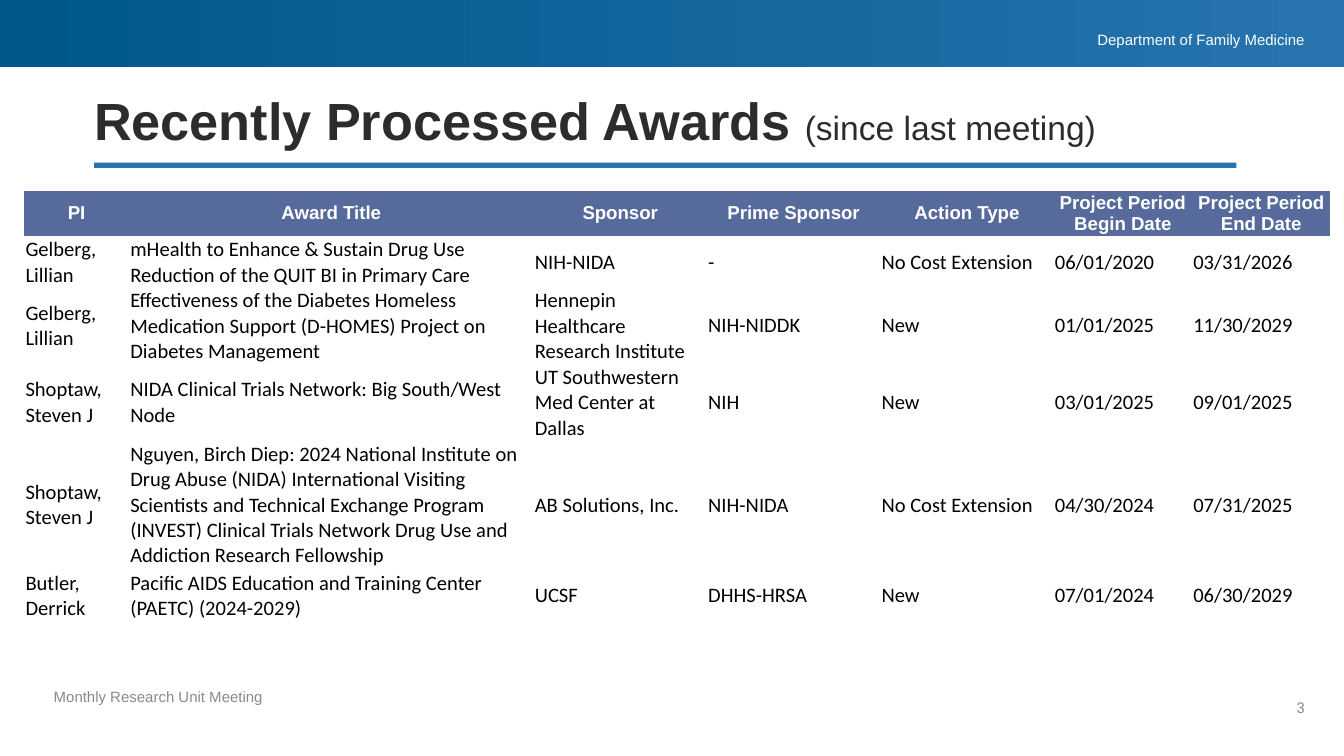
from dataclasses import dataclass

from pptx import Presentation
from pptx.dml.color import RGBColor as Rgb
from pptx.enum.shapes import MSO_SHAPE as Preset
from pptx.enum.text import MSO_ANCHOR as Anchor, MSO_AUTO_SIZE as AutoSize, PP_ALIGN as Align
from pptx.util import Inches, Pt


@dataclass(frozen=True)
class Theme:
    deep_blue: Rgb = Rgb.from_string("00578B")
    blue: Rgb = Rgb.from_string("2774AE")
    header: Rgb = Rgb.from_string("566B9C")
    ink: Rgb = Rgb.from_string("2B2C2E")
    gray: Rgb = Rgb.from_string("898989")
    black: Rgb = Rgb.from_string("000000")
    white: Rgb = Rgb.from_string("FFFFFF")
    title_size: Pt = Pt(28)
    subtitle_size: Pt = Pt(18)
    header_size: Pt = Pt(10)
    body_size: Pt = Pt(11)
    small_size: Pt = Pt(8)


THEME = Theme()
NO_STYLE_NO_GRID = "{2D5ABB26-0587-4C30-8999-92F81FD0307C}"

COLUMNS = [
    ("PI", 0.78), ("Award Title", 3.01), ("Sponsor", 1.29),
    ("Prime Sponsor", 1.29), ("Action Type", 1.29),
    ("Project Period Begin Date", 1.03), ("Project Period End Date", 1.03),
]
ROW_HEIGHTS = [0.31, 0.38, 0.57, 0.57, 0.96, 0.39]
AWARDS = [
    ("Gelberg, Lillian",
     "mHealth to Enhance & Sustain Drug Use Reduction of the QUIT BI in Primary Care",
     "NIH-NIDA", "-", "No Cost Extension", "06/01/2020", "03/31/2026"),
    ("Gelberg, Lillian",
     "Effectiveness of the Diabetes Homeless Medication Support (D-HOMES) Project on "
     "Diabetes Management",
     "Hennepin Healthcare Research Institute", "NIH-NIDDK", "New", "01/01/2025", "11/30/2029"),
    ("Shoptaw, Steven J",
     "NIDA Clinical Trials Network: Big South/West Node",
     "UT Southwestern Med Center at Dallas", "NIH", "New", "03/01/2025", "09/01/2025"),
    ("Shoptaw, Steven J",
     "Nguyen, Birch Diep: 2024 National Institute on Drug Abuse (NIDA) International "
     "Visiting Scientists and Technical Exchange Program (INVEST) Clinical Trials Network "
     "Drug Use and Addiction Research Fellowship",
     "AB Solutions, Inc.", "NIH-NIDA", "No Cost Extension", "04/30/2024", "07/31/2025"),
    ("Butler, Derrick",
     "Pacific AIDS Education and Training Center (PAETC) (2024-2029)",
     "UCSF", "DHHS-HRSA", "New", "07/01/2024", "06/30/2029"),
]


def apply_format(target, values):
    for name, value in values.items():
        setattr(target, name, value)


def set_margins(target, left, top, right, bottom):
    apply_format(target, {
        "margin_left": Inches(left), "margin_top": Inches(top),
        "margin_right": Inches(right), "margin_bottom": Inches(bottom),
    })


def add_run(paragraph, text, color, **font_format):
    run = paragraph.add_run()
    run.text = text
    apply_format(run.font, font_format)
    run.font.color.rgb = color


def add_bar(slide, left, top, width, height):
    bar = slide.shapes.add_shape(
        Preset.RECTANGLE, Inches(left), Inches(top), Inches(width), Inches(height))
    bar.shadow.inherit = False
    bar.line.fill.background()
    return bar


def add_banner(slide):
    banner = add_bar(slide, 0, 0, 10, 0.5)
    banner.fill.gradient()
    banner.fill.gradient_angle = 0
    for stop, color, position in zip(
            banner.fill.gradient_stops, (THEME.deep_blue, THEME.blue), (0, 1)):
        stop.color.rgb = color
        stop.position = position


def add_rule(slide):
    rule = add_bar(slide, 0.7, 1.21, 8.5, 0.04)
    rule.fill.solid()
    rule.fill.fore_color.rgb = THEME.blue


def add_label(slide, text, box, margins, color, font="Arial", align=Align.LEFT, spacing=1.0):
    label = slide.shapes.add_textbox(*map(Inches, box))
    frame = label.text_frame
    frame.word_wrap = True
    set_margins(frame, *margins)
    paragraph = frame.paragraphs[0]
    apply_format(paragraph, {"alignment": align, "line_spacing": spacing})
    add_run(paragraph, text, color, name=font, size=THEME.small_size)


def format_title(slide):
    title = slide.shapes.title
    apply_format(title, {
        "left": Inches(0.7), "top": Inches(0.71),
        "width": Inches(8.5), "height": Inches(0.42),
    })
    frame = title.text_frame
    apply_format(frame, {
        "word_wrap": True, "auto_size": AutoSize.NONE, "vertical_anchor": Anchor.BOTTOM,
    })
    set_margins(frame, 0, 0, 0, 0)
    heading = frame.paragraphs[0]
    apply_format(heading, {"alignment": Align.LEFT, "line_spacing": 0.9})
    add_run(heading, "Recently Processed Awards ", THEME.ink,
            name="Arial", size=THEME.title_size, bold=True)
    add_run(heading, "(since last meeting)", THEME.ink,
            name="Arial", size=THEME.subtitle_size, bold=False)


def fill_cell(cell, text, is_header):
    cell.fill.solid()
    cell.fill.fore_color.rgb = THEME.header if is_header else THEME.white
    cell.vertical_anchor = Anchor.MIDDLE
    inset = 0 if is_header else 0.01
    set_margins(cell, inset, inset, inset, 0)
    paragraph = cell.text_frame.paragraphs[0]
    paragraph.alignment = Align.CENTER if is_header else Align.LEFT
    if is_header:
        add_run(paragraph, text, THEME.white,
                name="Arial", size=THEME.header_size, bold=True)
    else:
        add_run(paragraph, text, THEME.black,
                name="Calibri", size=THEME.body_size, bold=False)


def add_awards_table(slide):
    headings, widths = zip(*COLUMNS)
    rows = [headings, *AWARDS]
    table = slide.shapes.add_table(
        len(rows), len(headings), Inches(0.18), Inches(1.42),
        Inches(sum(widths)), Inches(sum(ROW_HEIGHTS))).table
    table.horz_banding = False
    table._tbl.tblPr[0].text = NO_STYLE_NO_GRID
    for column, width in zip(table.columns, widths):
        column.width = Inches(width)
    for row, height in zip(table.rows, ROW_HEIGHTS):
        row.height = Inches(height)
    for row_index, row in enumerate(rows):
        for column_index, text in enumerate(row):
            fill_cell(table.cell(row_index, column_index), text, row_index == 0)


def main():
    deck = Presentation()
    slide_width = Inches(10)
    apply_format(deck, {"slide_width": slide_width, "slide_height": slide_width * 9 // 16})
    slide = deck.slides.add_slide(deck.slide_layouts[5])
    add_rule(slide)
    add_banner(slide)
    add_label(slide, "Department of Family Medicine", (7.2, 0.23, 2.51, 0.14),
              (0.1, 0, 0, 0.01), THEME.white, align=Align.RIGHT)
    add_label(slide, "Monthly Research Unit Meeting", (0.4, 5.21, 3.9, 0.4),
              (0, 0, 0, 0.28), THEME.gray, spacing=0.9)
    add_label(slide, "3", (9.21, 5.2, 0.5, 0.4),
              (0, 0, 0, 0), THEME.gray, font="Roboto", align=Align.RIGHT)
    format_title(slide)
    add_awards_table(slide)
    deck.save("out.pptx")


if __name__ == "__main__":
    main()
